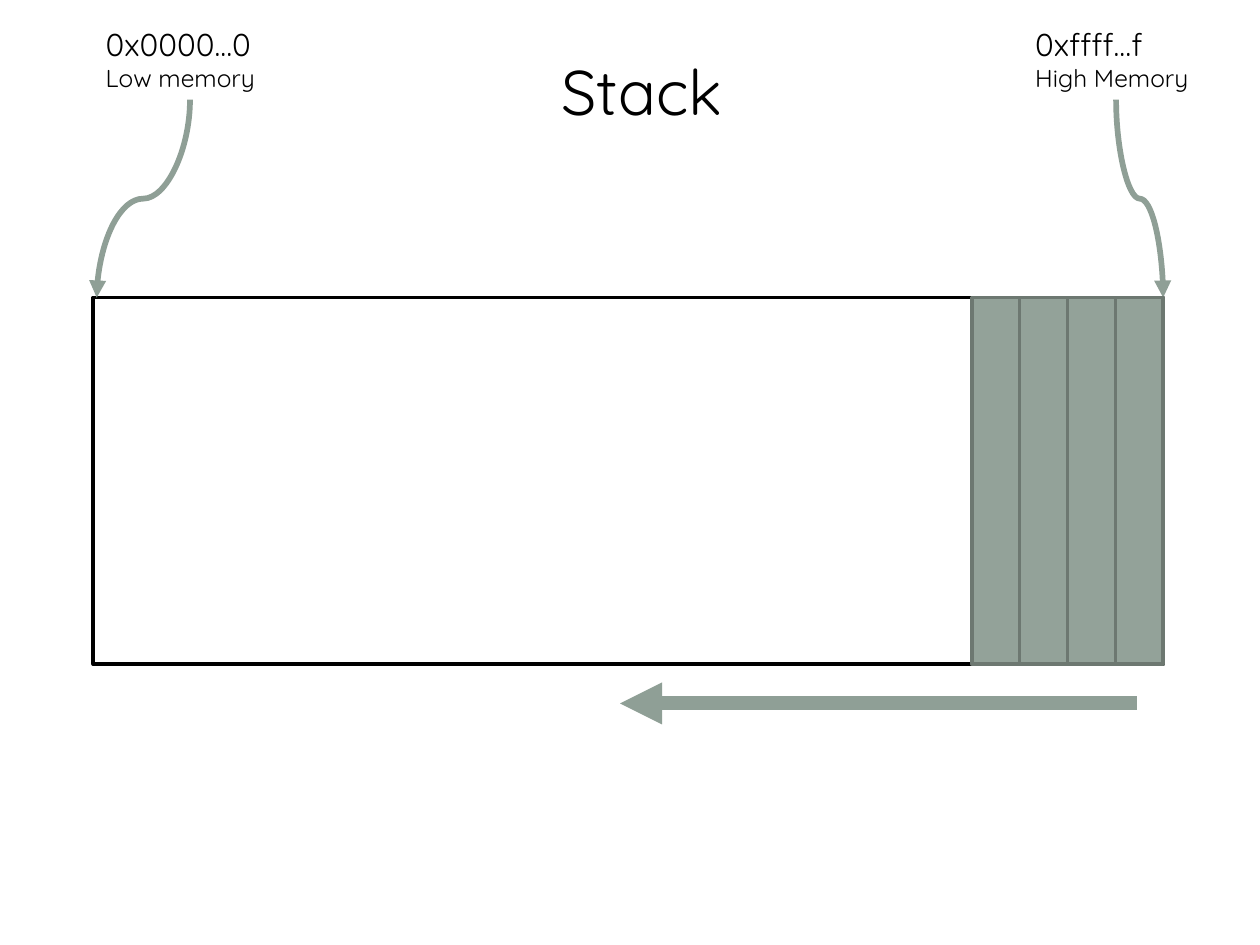
from pptx import Presentation
from pptx.dml.color import RGBColor
from pptx.enum.shapes import MSO_CONNECTOR as CONN, MSO_SHAPE as SHAPE
from pptx.enum.text import MSO_AUTO_SIZE as FIT, PP_ALIGN as ALIGN
from pptx.oxml.ns import qn
from pptx.util import Cm, Pt
from lxml.etree import SubElement

FONT = "Quicksand"
BLACK, ARROW, CELL, CELL_EDGE = "000000", "8F9F96", "93A299", "6D7871"
LEFT, TOP, WIDTH, HEIGHT = 1.88, 6, 21.57, 7.39
RIGHT = LEFT + WIDTH
CELL_COUNT, CELLS_WIDTH = 4, 3.86
LABEL_TOP, LABEL_HEIGHT = 0.38, 1.63


def rgb(value):
    """Turn a hex string into a colour."""
    return RGBColor.from_string(value)


def add_box(slide, x, y, w, h, line, fill=None):
    """Add an outlined rectangle, filled if a fill is given."""
    sp = slide.shapes.add_shape(SHAPE.RECTANGLE, Cm(x), Cm(y), Cm(w), Cm(h))
    sp.shadow.inherit = False
    sp.line.color.rgb = rgb(line)
    sp.line.width = Pt(2)
    if fill:
        sp.fill.solid()
        sp.fill.fore_color.rgb = rgb(fill)
    else:
        sp.fill.background()


def add_text(slide, x, y, w, h, lines, align=ALIGN.LEFT, wrap=True):
    """Add a text box with one paragraph for each (text, size) pair."""
    sp = slide.shapes.add_textbox(Cm(x), Cm(y), Cm(w), Cm(h))
    tf = sp.text_frame
    tf.word_wrap = wrap
    tf.auto_size = FIT.SHAPE_TO_FIT_TEXT
    tf.text = "\n".join(text for text, _ in lines)
    for p, (_, size) in zip(tf.paragraphs, lines):
        p.alignment = align
        for r in p.runs:
            r.font.name = FONT
            r.font.size = Pt(size)
            r.font.color.rgb = rgb(BLACK)


def add_arrow(slide, kind, x1, y1, x2, y2, width):
    """Add a connector with a triangular head at its end."""
    cxn = slide.shapes.add_connector(kind, Cm(x1), Cm(y1), Cm(x2), Cm(y2))
    cxn.line.color.rgb = rgb(ARROW)
    cxn.line.width = Pt(width)
    SubElement(cxn.line._get_or_add_ln(), qn("a:tailEnd"), type="triangle")
    SubElement(cxn._element.spPr, qn("a:effectLst"))
    return cxn


def add_falling_curve(slide, x1, y1, x2, y2):
    """Add a curved arrow that leaves and arrives vertically."""
    cx, cy = (x1 + x2) / 2, (y1 + y2) / 2
    turn = 1 if x2 < x1 else -1
    dx, dy = turn * (y2 - y1) / 2, abs(x2 - x1) / 2
    cxn = add_arrow(slide, CONN.CURVE, cx - dx, cy - dy, cx + dx, cy + dy, 3.25)
    xfrm = cxn._element.spPr.find(qn("a:xfrm"))
    xfrm.set("rot", str(turn * 90 % 360 * 60000))


def main():
    """Build the stack memory slide."""
    prs = Presentation()
    prs.slide_width, prs.slide_height = Cm(25.4), Cm(19.05)
    slide = prs.slides.add_slide(prs.slide_layouts[6])

    add_box(slide, LEFT, TOP, WIDTH, HEIGHT, BLACK)
    add_text(slide, 8.48, 0.94, 8.92, 1.8, [("Stack", 36)], ALIGN.CENTER)

    label_bottom = LABEL_TOP + LABEL_HEIGHT
    add_text(slide, 20.62, LABEL_TOP, 3.73, LABEL_HEIGHT,
             [("0xffff…f", 18), ("High Memory", 14)], wrap=False)
    add_falling_curve(slide, 22.5, label_bottom, RIGHT, TOP)
    add_text(slide, LEFT, LABEL_TOP, 3.86, LABEL_HEIGHT,
             [("0x0000…0", 18), ("Low memory", 14)])
    add_falling_curve(slide, 3.83, label_bottom, 1.95, TOP)

    cell_width = CELLS_WIDTH / CELL_COUNT
    for i in range(1, CELL_COUNT + 1):
        add_box(slide, RIGHT - i * cell_width, TOP, cell_width, HEIGHT,
                CELL_EDGE, CELL)
    add_arrow(slide, CONN.STRAIGHT, 22.92, 14.18, 12.5, 14.18, 8)

    prs.save("out.pptx")


if __name__ == "__main__":
    main()
